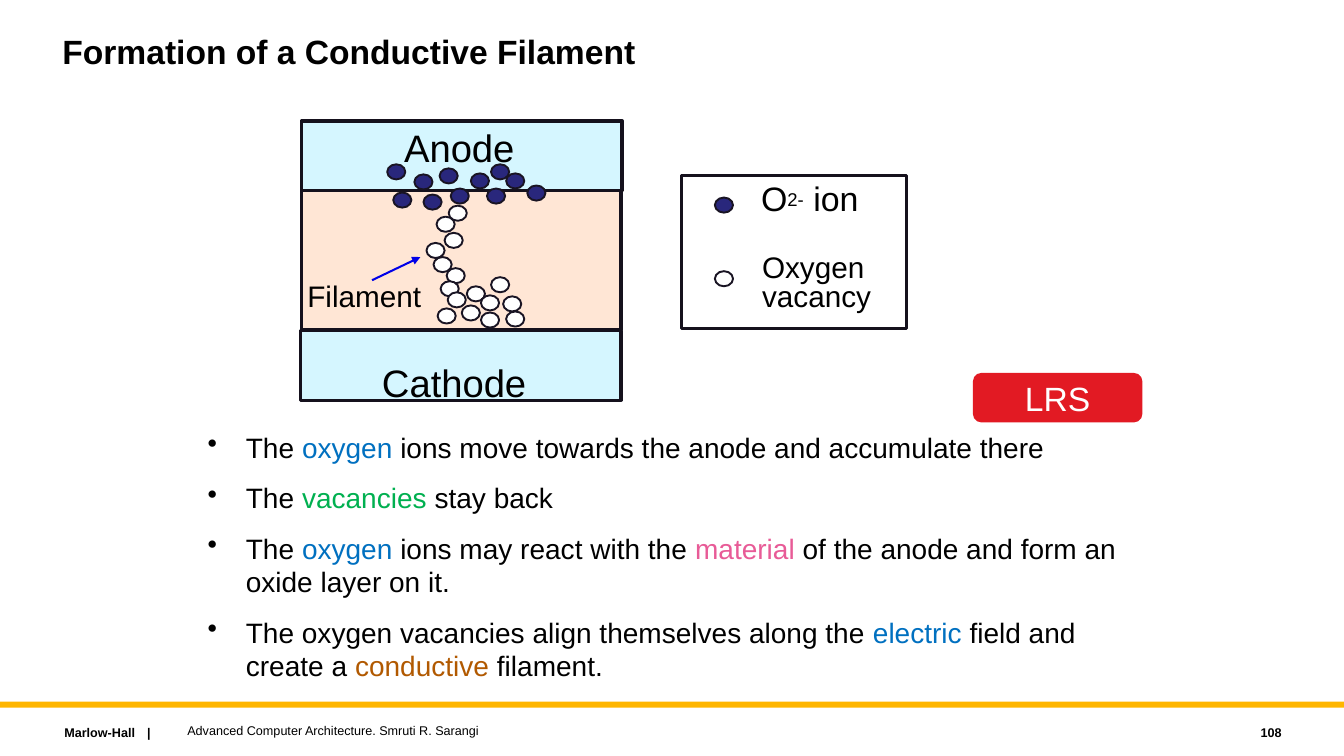
from dataclasses import dataclass

from lxml import etree
from pptx import Presentation
from pptx.dml.color import RGBColor
from pptx.enum.shapes import MSO_CONNECTOR, MSO_SHAPE
from pptx.enum.text import MSO_ANCHOR, MSO_AUTO_SIZE, PP_ALIGN
from pptx.oxml.ns import qn
from pptx.util import Emu, Pt

RECTANGLE, ROUNDED, OVAL = MSO_SHAPE.RECTANGLE, MSO_SHAPE.ROUNDED_RECTANGLE, MSO_SHAPE.OVAL
STRAIGHT = MSO_CONNECTOR.STRAIGHT
TOP, MIDDLE, BOTTOM = MSO_ANCHOR.TOP, MSO_ANCHOR.MIDDLE, MSO_ANCHOR.BOTTOM
LEFT, CENTER, RIGHT = PP_ALIGN.LEFT, PP_ALIGN.CENTER, PP_ALIGN.RIGHT
FIT_SHAPE = MSO_AUTO_SIZE.SHAPE_TO_FIT_TEXT
EMU_PER_PX = 9144  # 100 px to the inch


@dataclass(frozen=True)
class Theme:
    font: str = "Arial"
    text: str = "000000"
    white: str = "FFFFFF"
    rule: str = "FFB600"
    electrode: str = "D5F6FF"
    oxide: str = "FFE6D5"
    frame: str = "15111D"
    ion: str = "29277C"
    dot_edge: str = "191423"
    arrow: str = "0000E8"
    badge: str = "E21A23"
    blue: str = "0070C0"
    green: str = "00B050"
    pink: str = "E85B97"
    brown: str = "B15900"
    heading_size: float = 24
    body_size: float = 20
    footer_size: float = 9
    electrode_size: float = 27.3
    ion_size: float = 24.2
    charge_size: float = 22.7
    label_size: float = 21.2
    frame_width: float = 2.27
    dot_width: float = 1.37
    arrow_width: float = 1.44


THEME = Theme()
DOT_WIDTH, DOT_HEIGHT = 18, 15
BULLET_INDENT = 38
FOOTER_TAB = 82

# Top left corner of each dot
IONS = [(411, 173), (436, 167), (467, 172), (483, 187), (447, 187), (502, 172),
        (390, 191), (420, 193), (487, 163), (523, 184), (384, 163)]
VACANCIES = [(433, 215), (445, 204), (441, 231), (423, 241), (430, 255), (443, 266),
             (437, 279), (444, 290), (458, 303), (477, 310), (434, 306), (463, 284),
             (499, 294), (487, 275), (477, 293), (502, 309)]
LEGEND_ION, LEGEND_VACANCY = (709, 196), (709, 269)

BULLETS = [
    [("The ", None), ("oxygen", THEME.blue),
     (" ions move towards the anode and accumulate there", None)],
    [("The ", None), ("vacancies", THEME.green), (" stay back", None)],
    [("The ", None), ("oxygen", THEME.blue), (" ions may react with the ", None),
     ("material", THEME.pink), (" of the anode and form an oxide layer on it.", None)],
    [("The oxygen vacancies align themselves along the ", None), ("electric", THEME.blue),
     (" field and create a ", None), ("conductive", THEME.brown), (" filament.", None)],
]


def px(*lengths):
    return [Emu(length * EMU_PER_PX) for length in lengths]


def rgb(colour):
    return RGBColor.from_string(colour)


def style_paragraph(para, size, colour=THEME.text, bold=False, align=LEFT):
    para.alignment = align
    para.font.name = THEME.font
    para.font.size = Pt(size)
    para.font.bold = bold
    para.font.color.rgb = rgb(colour)


def add_text_box(page, at, anchor=TOP):
    frame = page.shapes.add_textbox(*px(*at)).text_frame
    frame.word_wrap = True
    frame.vertical_anchor = anchor
    return frame


def add_line_of_text(page, at, text, size, anchor=TOP, bold=False, align=LEFT):
    para = add_text_box(page, at, anchor).paragraphs[0]
    para.text = text
    style_paragraph(para, size, bold=bold, align=align)
    return para


def add_label(page, at, size, *texts, anchor=TOP):
    """Add a one-line label that never wraps, and return its spans."""
    frame = add_text_box(page, at, anchor)
    frame.word_wrap = False
    frame.auto_size = FIT_SHAPE
    para = frame.paragraphs[0]
    spans = []
    for text in texts:
        span = para.add_run()
        span.text = text
        spans.append(span)
    style_paragraph(para, size)
    return spans


def add_panel(page, kind, at, fill=None, edge=None, edge_width=0):
    panel = page.shapes.add_shape(kind, *px(*at))
    panel.shadow.inherit = False
    if fill:
        panel.fill.solid()
        panel.fill.fore_color.rgb = rgb(fill)
    else:
        panel.fill.background()
    if edge:
        panel.line.color.rgb = rgb(edge)
        panel.line.width = Pt(edge_width)
    else:
        panel.line.fill.background()
    return panel


def add_framed_panel(page, at, fill=None):
    add_panel(page, RECTANGLE, at, fill, THEME.frame, THEME.frame_width)


def add_dots(page, corners, fill):
    for left, top in corners:
        add_panel(page, OVAL, (left, top, DOT_WIDTH, DOT_HEIGHT), fill,
                  THEME.dot_edge, THEME.dot_width)


def add_arrow(page, start, end):
    arrow = page.shapes.add_connector(STRAIGHT, *px(*start, *end))
    arrow.line.color.rgb = rgb(THEME.arrow)
    arrow.line.width = Pt(THEME.arrow_width)
    etree.SubElement(arrow.line._get_or_add_ln(), qn("a:tailEnd"), type="triangle")
    etree.SubElement(arrow._element.spPr, qn("a:effectLst"))


def add_bullets(page, at):
    frame = add_text_box(page, at)
    for number, spans in enumerate(BULLETS):
        para = frame.add_paragraph() if number else frame.paragraphs[0]
        properties = para._p.get_or_add_pPr()
        indent = BULLET_INDENT * EMU_PER_PX
        properties.set("marL", str(indent))
        properties.set("indent", str(-indent))
        etree.SubElement(properties, qn("a:buChar"), char="•")
        para.space_before = Pt(12 if number else 0)
        style_paragraph(para, THEME.body_size)
        for text, colour in spans:
            span = para.add_run()
            span.text = text
            if colour:
                span.font.color.rgb = rgb(colour)


def add_device(page):
    add_framed_panel(page, (299, 120, 318, 69), THEME.electrode)
    add_framed_panel(page, (298, 328, 318, 69), THEME.electrode)
    add_framed_panel(page, (299, 189, 317, 138), THEME.oxide)
    add_label(page, (391, 118, 131, 56), THEME.electrode_size, "Anode")
    add_label(page, (369, 352, 165, 56), THEME.electrode_size, "Cathode")
    add_dots(page, IONS, THEME.ion)
    add_dots(page, VACANCIES, THEME.white)
    add_label(page, (295, 271, 135, 46), THEME.label_size, "Filament")
    add_arrow(page, (369, 278), (417, 255))


def add_legend(page):
    add_framed_panel(page, (676, 174, 223, 152))
    add_dots(page, [LEGEND_ION], THEME.ion)
    add_dots(page, [LEGEND_VACANCY], THEME.white)
    charge = add_label(page, (745, 171, 120, 51), THEME.ion_size,
                       "O", "2-", " ion", anchor=BOTTOM)[1]
    charge.font.size = Pt(THEME.charge_size)
    charge.font._element.set("baseline", "18000")
    add_label(page, (746, 242, 131, 46), THEME.label_size, "Oxygen")
    add_label(page, (746, 271, 129, 46), THEME.label_size, "vacancy")


def add_badge(page):
    badge = add_panel(page, ROUNDED, (965, 370, 168, 49), THEME.badge)
    badge.text_frame.vertical_anchor = MIDDLE
    para = badge.text_frame.paragraphs[0]
    para.text = "LRS"
    style_paragraph(para, THEME.heading_size, THEME.white, align=CENTER)


def add_footer(page):
    add_panel(page, RECTANGLE, (0, 696, 1333, 6), THEME.rule)
    para = add_text_box(page, (54, 714, 227, 25)).paragraphs[0]
    tabs = etree.SubElement(para._p.get_or_add_pPr(), qn("a:tabLst"))
    etree.SubElement(tabs, qn("a:tab"), pos=str(FOOTER_TAB * EMU_PER_PX), algn="l")
    para.text = "Marlow-Hall\t|"
    style_paragraph(para, THEME.footer_size, bold=True)
    add_line_of_text(page, (176, 712, 800, 25),
                     "Advanced Computer Architecture. Smruti R. Sarangi",
                     THEME.footer_size, MIDDLE)
    add_line_of_text(page, (1141, 714, 140, 25), "108", THEME.footer_size, MIDDLE,
                     bold=True, align=RIGHT)


def main():
    deck = Presentation()
    deck.slide_width, deck.slide_height = px(1333, 750)
    page = deck.slides.add_slide(deck.slide_layouts[6])
    title = add_line_of_text(page, (52, 30, 1000, 90), "Formation of a Conductive Filament",
                             THEME.heading_size, bold=True)
    title.line_spacing = 0.9
    add_device(page)
    add_legend(page)
    add_bullets(page, (196, 422, 941, 269))
    add_badge(page)
    add_footer(page)
    deck.save("out.pptx")


if __name__ == "__main__":
    main()
